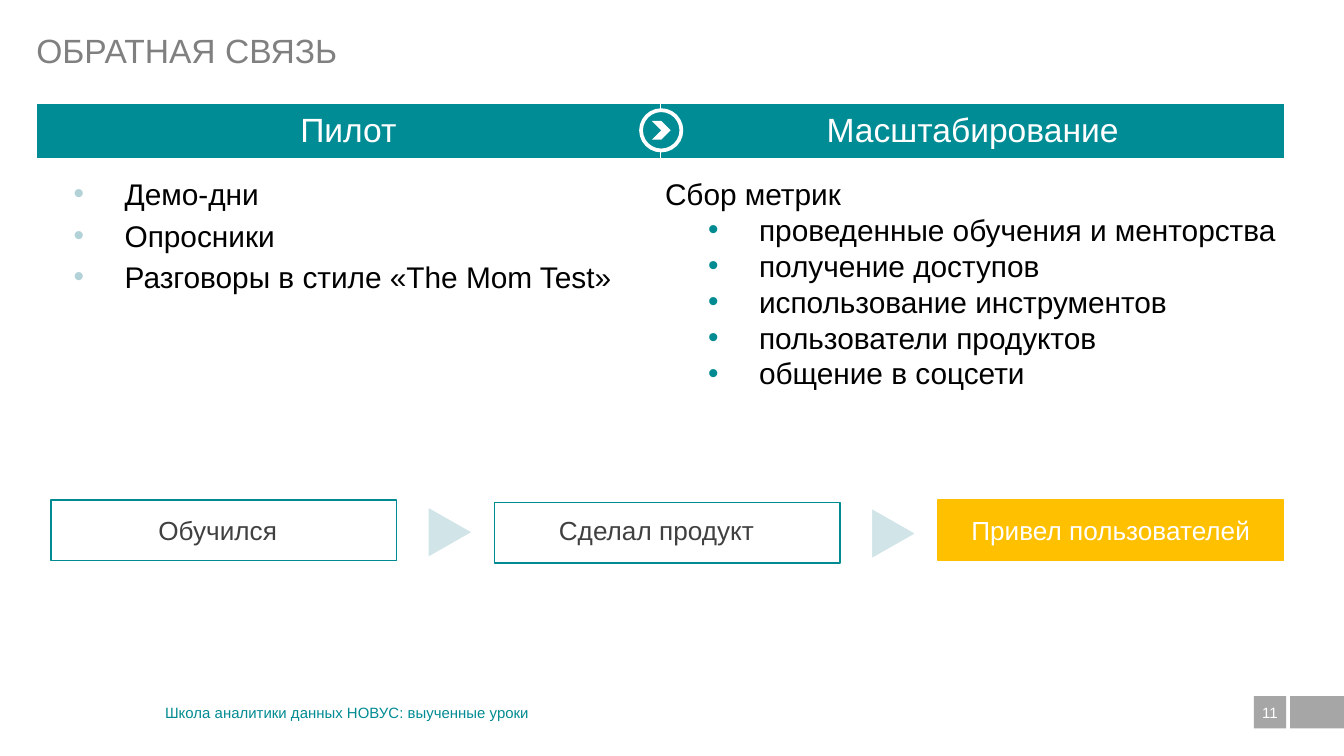
import pptx
import pptx.dml.color
import pptx.enum.shapes
import pptx.enum.text
import pptx.oxml
import pptx.oxml.ns
import pptx.util

Inches, Pt = pptx.util.Inches, pptx.util.Pt
RGBColor = pptx.dml.color.RGBColor
SHAPE = pptx.enum.shapes.MSO_SHAPE
ALIGN = pptx.enum.text.PP_ALIGN
ANCHOR = pptx.enum.text.MSO_ANCHOR
NS = pptx.oxml.ns.nsdecls("a")

WHITE = RGBColor(0xFF, 0xFF, 0xFF)
BLACK = RGBColor(0, 0, 0)
DARK = RGBColor(0x40, 0x40, 0x40)
TITLE_GRAY = RGBColor(0x80, 0x80, 0x80)
PAGE_GRAY = RGBColor(0xA6, 0xA6, 0xA6)
TEAL = RGBColor(0x00, 0x8B, 0x92)
HEADER_TEAL = RGBColor(0x00, 0x8C, 0x95)
PALE_TEAL = RGBColor(0xB2, 0xD2, 0xD8)
ARROW_TEAL = RGBColor(0xD1, 0xE4, 0xE8)
AMBER = RGBColor(0xFF, 0xC0, 0x00)


class SlideBuilder:
    font = "Arial"

    def __init__(self, slide):
        self.s = slide

    def style(self, p, size, color, align=ALIGN.LEFT):
        p.alignment = align
        for r in p.runs:
            r.font.name = self.font
            r.font.size = Pt(size)
            r.font.color.rgb = color

    def title(self, text, x, y, w, h):
        sp = self.s.shapes.title
        sp.left, sp.top, sp.width, sp.height = map(Inches, (x, y, w, h))
        tf = sp.text_frame
        tf.text = text
        tf.vertical_anchor = ANCHOR.MIDDLE
        tf.margin_left = tf.margin_right = tf.margin_top = tf.margin_bottom = 0
        self.style(tf.paragraphs[0], 18, TITLE_GRAY)

    def text(self, lines, x, y, w, h, size, color, align=ALIGN.LEFT,
             anchor=ANCHOR.TOP, fill=None):
        sp = self.s.shapes.add_textbox(*map(Inches, (x, y, w, h)))
        if fill is not None:
            sp.fill.solid()
            sp.fill.fore_color.rgb = fill
        tf = sp.text_frame
        tf.word_wrap = True
        tf.vertical_anchor = anchor
        tf.text = "\n".join(lines)
        for p in tf.paragraphs:
            self.style(p, size, color, align)
        return tf.paragraphs

    def bullet(self, p, indent, color):
        pPr = p._p.get_or_add_pPr()
        pPr.set("marL", str(Inches(indent)))
        pPr.set("indent", str(Inches(-0.38)))
        for xml in (f'<a:buClr {NS}><a:srgbClr val="{color}"/></a:buClr>',
                    f'<a:buFont {NS} typeface="{self.font}"/>',
                    f'<a:buChar {NS} char="•"/>'):
            pPr.append(pptx.oxml.parse_xml(xml))

    def shape(self, kind, x, y, w, h, fill=None, line=None, weight=0.75, rotation=0):
        sp = self.s.shapes.add_shape(kind, *map(Inches, (x, y, w, h)))
        sp.shadow.inherit = False
        sp.rotation = rotation
        if fill is None:
            sp.fill.background()
        else:
            sp.fill.solid()
            sp.fill.fore_color.rgb = fill
        if line is None:
            sp.line.fill.background()
        else:
            sp.line.color.rgb = line
            sp.line.width = Pt(weight)
        return sp

    def header_table(self, labels, x, y, w, h):
        table = self.s.shapes.add_table(1, len(labels), *map(Inches, (x, y, w, h))).table
        for cell, label in zip(table.rows[0].cells, labels):
            cell.text = label
            cell.vertical_anchor = ANCHOR.MIDDLE
            cell.margin_left = cell.margin_right = Inches(0.08)
            cell.margin_top = cell.margin_bottom = Inches(0.05)
            cell.fill.solid()
            cell.fill.fore_color.rgb = HEADER_TEAL
            self.style(cell.text_frame.paragraphs[0], 18, WHITE, ALIGN.CENTER)
            for i, side in enumerate(("lnL", "lnR", "lnT", "lnB")):
                cell._tc.get_or_add_tcPr().insert(i, pptx.oxml.parse_xml(
                    f'<a:{side} {NS} w="{Pt(1)}"><a:solidFill>'
                    f'<a:srgbClr val="{WHITE}"/></a:solidFill></a:{side}>'))


def main():
    prs = pptx.Presentation()
    prs.slide_width = Inches(10)
    prs.slide_height = prs.slide_width * 9 // 16
    b = SlideBuilder(prs.slides.add_slide(prs.slide_layouts[5]))

    b.title("ОБРАТНАЯ СВЯЗЬ", 0.27, 0.14, 8.35, 0.47)

    # Footer and page number
    b.shape(SHAPE.RECTANGLE, 9.6, 5.18, 0.4, 0.24, PAGE_GRAY)
    page = b.shape(SHAPE.RECTANGLE, 9.33, 5.18, 0.24, 0.24, PAGE_GRAY)
    tf = page.text_frame
    tf.margin_left = tf.margin_right = tf.margin_top = tf.margin_bottom = 0
    tf.vertical_anchor = ANCHOR.MIDDLE
    tf.text = "11"
    b.style(tf.paragraphs[0], 8, WHITE, ALIGN.CENTER)
    b.text(["Школа аналитики данных НОВУС: выученные уроки"],
           1.13, 5.18, 8.17, 0.24, 8, TEAL, anchor=ANCHOR.MIDDLE)

    # Pilot column
    pilot = b.text(["Демо-дни", "Опросники", "Разговоры в стиле «The Mom Test»"],
                   0.45, 1.26, 4.4, 1.4, 16, BLACK)
    for i, p in enumerate(pilot):
        if i:
            p.space_before = Pt(3)
        b.bullet(p, 0.38, PALE_TEAL)

    # Column headers with the chevron badge
    b.header_table(["Пилот", "Масштабирование"], 0.27, 0.77, 9.29, 0.41)
    b.shape(SHAPE.OVAL, 4.77, 0.82, 0.3, 0.3, HEADER_TEAL, WHITE, 2)
    b.shape(SHAPE.CHEVRON, 4.85, 0.9, 0.14, 0.14, WHITE)

    # Scaling column
    scaling = b.text(["Сбор метрик", "проведенные обучения и менторства",
                      "получение доступов", "использование инструментов",
                      "пользователи продуктов", "общение в соцсети"],
                     4.85, 1.26, 5, 1.72, 16, BLACK)
    for p in scaling[1:]:
        p.level = 1
        b.bullet(p, 0.7, TEAL)

    # Process steps: box place, fill, line, then label place and colour
    steps = [
        ("Обучился", 0.38, 3.72, None, TEAL, 0.44, 2.36, DARK),
        ("Сделал продукт", 3.68, 3.74, None, TEAL, 3.33, 3.11, DARK),
        ("Привел пользователей", 6.98, 3.72, AMBER, AMBER, 6.98, 2.57, WHITE),
    ]
    for label, x, y, fill, line, text_x, text_w, color in steps:
        b.shape(SHAPE.RECTANGLE, x, y, 2.57, 0.45, fill, line)
        b.text([label], text_x, 3.78, text_w, 0.34, 14, color, ALIGN.CENTER, fill=fill)
    for x, y in ((3.15, 3.78), (6.45, 3.79)):
        b.shape(SHAPE.ISOSCELES_TRIANGLE, x, y, 0.41, 0.36, ARROW_TEAL, WHITE, 2, 90)

    prs.save("out.pptx")


if __name__ == "__main__":
    main()
